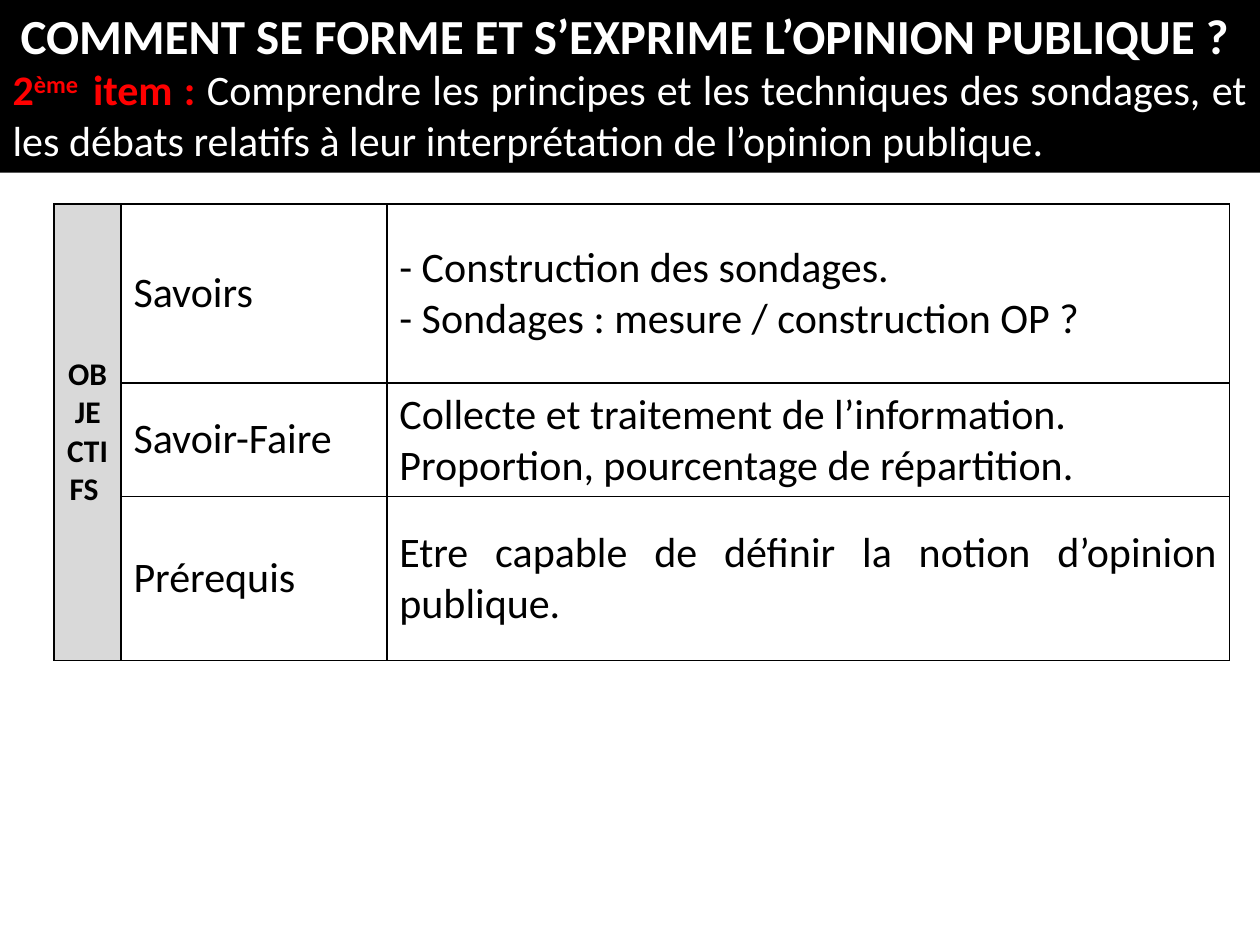
from lxml.etree import SubElement
from pptx import Presentation
from pptx.dml.color import RGBColor
from pptx.enum.text import MSO_ANCHOR as Anchor, MSO_AUTO_SIZE as AutoSize, PP_ALIGN as Align
from pptx.oxml.ns import qn
from pptx.util import Inches, Pt

COLORS = {"black": "000000", "white": "FFFFFF", "red": "FF0000", "gray": "D9D9D9"}
FONT = "Calibri"
COLUMNS = [0.53, 2.11, 6.69]
ROWS = [1.42, 0.83, 1.06]
OBJECTIVES = [
    ("Savoirs", "- Construction des sondages.\n- Sondages : mesure / construction OP ?"),
    ("Savoir-Faire", "Collecte et traitement de l’information.\nProportion, pourcentage de répartition."),
    ("Prérequis", "Etre capable de définir la notion d’opinion publique."),
]


def color(name):
    return RGBColor.from_string(COLORS[name])


def paint(target, name):
    target.fill.solid()
    target.fill.fore_color.rgb = color(name)


def format_run(run, size, color_name, bold=False):
    run.font.name = FONT
    run.font.size = Pt(size)
    run.font.bold = bold
    run.font.color.rgb = color(color_name)


def add_header(slide, left, top, width, height):
    title = slide.shapes.title
    title.left, title.top, title.width, title.height = map(Inches, (left, top, width, height))
    paint(title, "black")
    frame = title.text_frame
    frame.word_wrap = True
    frame.auto_size = AutoSize.SHAPE_TO_FIT_TEXT
    frame.vertical_anchor = Anchor.TOP

    heading = frame.paragraphs[0]
    heading.text = "COMMENT SE FORME ET S’EXPRIME L’OPINION PUBLIQUE ? "
    heading.alignment = Align.CENTER
    format_run(heading.runs[0], 28, "white", bold=True)

    item = frame.add_paragraph()
    item.alignment = Align.JUSTIFY
    parts = [
        ("2", "red", True),
        ("ème  ", "red", True),
        ("item : ", "red", True),
        ("Comprendre les principes et les techniques des sondages, et les débats "
         "relatifs à leur interprétation de l’opinion publique. ", "white", False),
    ]
    for text, color_name, bold in parts:
        run = item.add_run()
        run.text = text
        format_run(run, 24, color_name, bold)
    item.runs[1].font._element.set("baseline", "30000")


def add_borders(cell):
    properties = cell._tc.get_or_add_tcPr()
    for position, side in enumerate(("lnL", "lnR", "lnT", "lnB")):
        line = SubElement(properties, qn(f"a:{side}"), w=str(Pt(1)))
        fill = SubElement(line, qn("a:solidFill"))
        SubElement(fill, qn("a:srgbClr"), val=COLORS["black"])
        properties.remove(line)
        properties.insert(position, line)  # borders come before the fill


def fill_cell(cell, text, size=24, bold=False, alignment=Align.JUSTIFY):
    cell.text = text
    cell.vertical_anchor = Anchor.MIDDLE
    for paragraph in cell.text_frame.paragraphs:
        paragraph.alignment = alignment
        for run in paragraph.runs:
            format_run(run, size, "black", bold)


def add_objectives(slide, left, top):
    frame = slide.shapes.add_table(len(ROWS), len(COLUMNS), Inches(left), Inches(top),
                                   Inches(sum(COLUMNS)), Inches(sum(ROWS)))
    table = frame.table
    table.first_row = table.horz_banding = False
    for column, width in zip(table.columns, COLUMNS):
        column.width = Inches(width)
    for row, height in zip(table.rows, ROWS):
        row.height = Inches(height)
    for cell in table.iter_cells():
        paint(cell, "white")
        add_borders(cell)
    for row, texts in enumerate(OBJECTIVES):
        for column, text in enumerate(texts, start=1):
            fill_cell(table.cell(row, column), text)

    label = table.cell(0, 0)
    label.merge(table.cell(len(ROWS) - 1, 0))
    fill_cell(label, "OBJECTIFS ", 18, True, Align.CENTER)
    paint(label, "gray")
    label._tc.get_or_add_tcPr().set("vert", "wordArtVert")


def main():
    presentation = Presentation()
    presentation.slide_width, presentation.slide_height = Inches(10), Inches(7.5)
    slide = presentation.slides.add_slide(presentation.slide_layouts.get_by_name("Title Only"))
    add_header(slide, 0, -0.01, 10, 1.38)
    add_objectives(slide, 0.43, 1.62)
    presentation.save("out.pptx")


if __name__ == "__main__":
    main()
